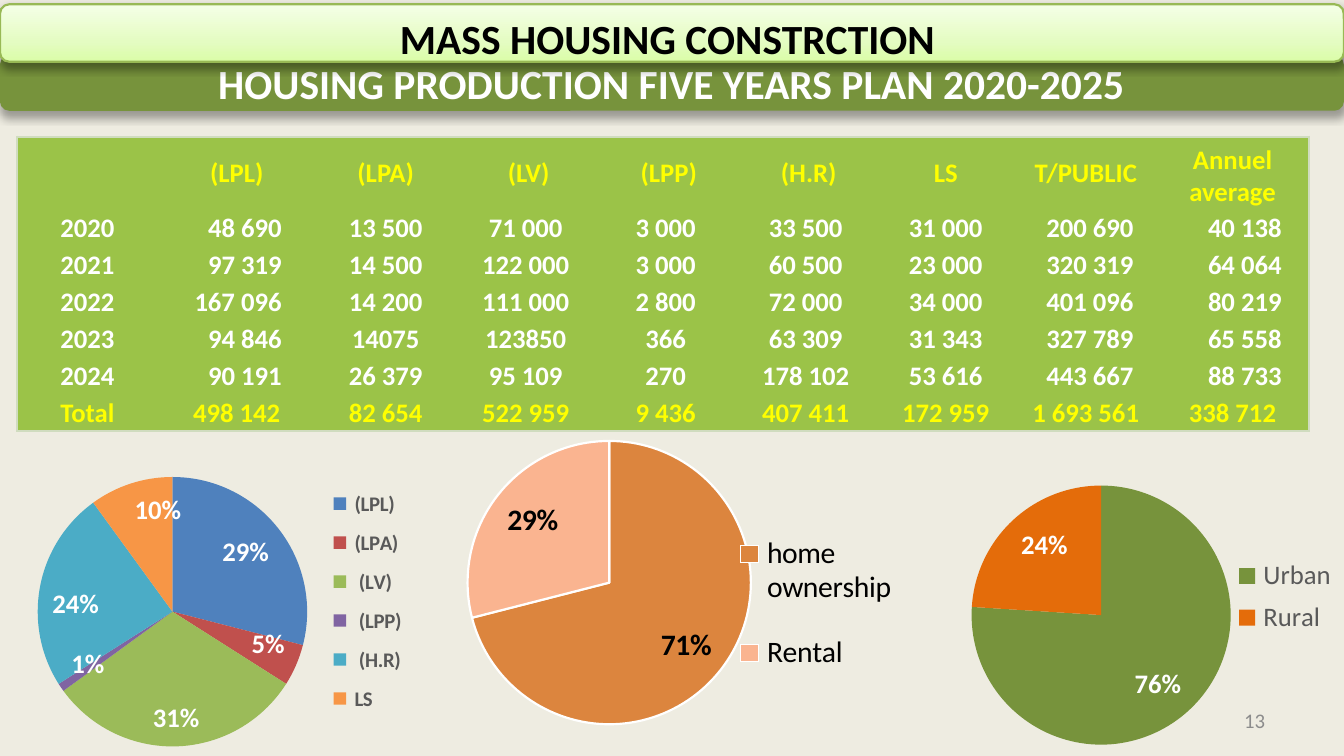
from copy import deepcopy
from lxml import etree
from pptx import Presentation
from pptx.chart.data import CategoryChartData
from pptx.dml.color import RGBColor
from pptx.enum.chart import XL_CHART_TYPE, XL_LABEL_POSITION, XL_LEGEND_POSITION
from pptx.enum.shapes import MSO_SHAPE
from pptx.enum.text import MSO_ANCHOR, PP_ALIGN
from pptx.oxml.ns import qn
from pptx.util import Inches, Pt

PIE = XL_CHART_TYPE.PIE
INSIDE = XL_LABEL_POSITION.INSIDE_END
ON_LEFT, ON_RIGHT = XL_LEGEND_POSITION.LEFT, XL_LEGEND_POSITION.RIGHT
ROUND = MSO_SHAPE.ROUNDED_RECTANGLE
TOP, MIDDLE, BOTTOM = MSO_ANCHOR.TOP, MSO_ANCHOR.MIDDLE, MSO_ANCHOR.BOTTOM
CENTER, RIGHT = PP_ALIGN.CENTER, PP_ALIGN.RIGHT


def rgb(code):
    return RGBColor.from_string(code)


def style(font, size, color, bold=False):
    font.name = "Calibri"
    font.size = Pt(size)
    font.bold = bold
    font.color.rgb = rgb(color)


prs = Presentation()
prs.slide_width, prs.slide_height = Inches(6.3), Inches(6.3 * 9 / 16)
slide = prs.slides.add_slide(prs.slide_layouts[6])
slide.background.fill.solid()
slide.background.fill.fore_color.rgb = rgb("EEECE1")

banners = [
    ("HOUSING PRODUCTION FIVE YEARS PLAN 2020-2025", 0.26, 0.26, MIDDLE, "FFFFFF", 35, 1.8, 0.06),
    ("MASS HOUSING CONSTRCTION", 0.02, 0.27, TOP, "000000", 38, 1.6, 0.1),
]
for text, top, height, anchor, color, alpha, dist, inset in banners:
    bar = slide.shapes.add_shape(ROUND, 0, Inches(top), Inches(6.3), Inches(height))
    bar.shadow.inherit = False
    effects = bar._element.spPr.find(qn("a:effectLst"))
    shade = etree.SubElement(effects, qn("a:outerShdw"), blurRad=str(Pt(3.1)),
                             dist=str(Pt(dist)), dir="5400000", rotWithShape="0")
    black = etree.SubElement(shade, qn("a:srgbClr"), val="000000")
    etree.SubElement(black, qn("a:alpha"), val=str(alpha * 1000))
    if anchor == TOP:
        bar.fill.gradient()
        bar.fill.gradient_angle = 90
        stops = bar._element.spPr.find(".//" + qn("a:gsLst"))
        stops.insert(1, deepcopy(stops[0]))
        tints = [(0, "DAFDA7"), (0.35, "E4FCC2"), (1, "F5FFE7")]
        for stop, (place, tint) in zip(bar.fill.gradient_stops, tints):
            stop.position = place
            stop.color.rgb = rgb(tint)
        bar.line.color.rgb = rgb("98B955")
        bar.line.width = Pt(0.75)
    else:
        bar.fill.solid()
        bar.fill.fore_color.rgb = rgb("77933C")
        bar.line.fill.background()
    frame = bar.text_frame
    frame.text = text
    frame.word_wrap = True
    frame.vertical_anchor = anchor
    frame.margin_left = Inches(0.06)
    frame.margin_right = Inches(inset)
    frame.margin_top = frame.margin_bottom = Inches(0.03)
    frame.paragraphs[0].alignment = CENTER
    style(frame.paragraphs[0].runs[0].font, 14, color, True)

pies = [
    ((-0.7, 2.08, 3.21, 1.42), ["(LPL)", "(LPA)", " (LV)", " (LPP)", " (H.R)", "LS"],
     [29, 5, 31, 1, 24, 10],
     ["4F81BD", "C0504D", "9BBB59", "8064A2", "4BACC6", "F79646"],
     (0.25, 0.11, 0.44, 0.89), (0.69, 0.11, 0.13, 0.82), ON_LEFT,
     (7, "595959", True), (9, "FFFFFF", True), False),
    ((4.09, 1.95, 2.21, 1.57), ["Urban", "Rural"], [76, 24], ["77933C", "E46C0A"],
     (0.21, 0.19, 0.55, 0.81), (0.75, 0.4, 0.25, 0.28), ON_RIGHT,
     (9, "595959", False), (9, "FFFFFF", True), False),
    ((1.51, 1.93, 3.59, 1.62), ["home ownership", "Rental"], [71, 29], ["DC853E", "FAB490"],
     (0.19, 0.08, 0.37, 0.83), (0.53, 0.27, 0.23, 0.57), ON_RIGHT,
     (10, "000000", False), (10, "000000", True), True),
]
for box, cats, vals, fills, plot, key, side, small, label, edged in pies:
    data = CategoryChartData()
    data.categories = cats
    data.add_series("Series 1", vals)
    chart = slide.shapes.add_chart(PIE, *map(Inches, box), data).chart
    chart.has_title = False
    style(chart.font, 10, "000000")
    chart.has_legend = True
    legend = chart.legend
    legend.position = side
    legend.include_in_layout = False
    style(legend.font, *small)
    pie = chart.plots[0]
    pie.vary_by_categories = True
    pie.has_data_labels = True
    labels = pie.data_labels
    labels.show_percentage = True
    labels.show_value = False
    labels.number_format = "0%"
    labels.number_format_is_linked = False
    labels.position = INSIDE
    style(labels.font, *label)
    for i, fill in enumerate(fills):
        wedge = pie.series[0].points[i].format
        wedge.fill.solid()
        wedge.fill.fore_color.rgb = rgb(fill)
        if edged:
            wedge.line.color.rgb = rgb("FFFFFF")
            wedge.line.width = Pt(0.75)
        else:
            wedge.line.fill.background()
    area = chart._chartSpace.chart.plotArea
    for owner, spot, inner in [(area, plot, True), (legend._element, key, False)]:
        for old in owner.findall(qn("c:layout")):
            owner.remove(old)
        layout = etree.Element(qn("c:layout"))
        manual = etree.SubElement(layout, qn("c:manualLayout"))
        if inner:
            etree.SubElement(manual, qn("c:layoutTarget"), val="inner")
        for tag in ("xMode", "yMode"):
            etree.SubElement(manual, qn("c:" + tag), val="edge")
        for tag, size in zip("xywh", spot):
            etree.SubElement(manual, qn("c:" + tag), val=str(size))
        owner.insert(0 if inner else 1, layout)

rows = [
    ["", "(LPL)", "(LPA)", " (LV)", " (LPP)", " (H.R)", "LS", "T/PUBLIC", "Annuel average"],
    ["2020", "48 690", "13 500", "71 000", "3 000", "33 500", "31 000", "200 690", "40 138"],
    ["2021", "97 319", "14 500", "122 000", "3 000", "60 500", "23 000", "320 319", "64 064"],
    ["2022", "167 096", "14 200", "111 000", "2 800", "72 000", "34 000", "401 096", "80 219"],
    ["2023", "94 846", "14075", "123850", "366", "63 309", "31 343", "327 789", "65 558"],
    ["2024", "90 191", "26 379", "95 109", "270", "178 102", "53 616", "443 667", "88 733"],
    ["Total", "498 142", "82 654", "522 959", "9 436", "407 411", "172 959", "1 693 561", "338 712"],
]
last, end = len(rows) - 1, len(rows[0]) - 1
table = slide.shapes.add_table(last + 1, end + 1, Inches(0.08), Inches(0.64),
                               Inches(6.06), Inches(1.38)).table
for c, col in enumerate(table.columns):
    col.width = Inches({0: 0.66, 1: 0.74, end: 0.72}.get(c, 3.94 / 6))
for r, row in enumerate(table.rows):
    row.height = Inches(1.04 / 6 if r else 0.34)
    for c, text in enumerate(rows[r]):
        cell = table.cell(r, c)
        cell.text = text
        cell.margin_left = cell.margin_right = cell.margin_top = Inches(0.01)
        cell.margin_bottom = 0
        cell.vertical_anchor = BOTTOM if (r, c) == (0, end) else MIDDLE
        para = cell.text_frame.paragraphs[0]
        para.alignment = CENTER
        if 0 < r < last and c in (1, end):
            para.alignment = RIGHT
            cell.margin_right = Inches(0.16 if c == 1 else 0.13)
        if 0 < r < last and c == end - 1:
            cell.margin_left = Inches(0.05)
        para.font.size = Pt(9)
        for run in para.runs:
            style(run.font, 9, "FFFF00" if r in (0, last) else "FFFFFF", True)
        props = cell._tc.get_or_add_tcPr()
        sides = {"L": c == 0, "R": c == end, "T": r == 0, "B": r == last}
        for name, outer in sides.items():
            edge = etree.SubElement(props, qn("a:ln" + name), w=str(Pt(0.75)))
            if outer:
                paint = etree.SubElement(edge, qn("a:solidFill"))
                etree.SubElement(paint, qn("a:srgbClr"), val="D0DCBF")
            else:
                etree.SubElement(edge, qn("a:noFill"))
        cell.fill.solid()
        cell.fill.fore_color.rgb = rgb("9BC348")

page = slide.shapes.add_textbox(Inches(4.52), Inches(3.28), Inches(1.47), Inches(0.19))
frame = page.text_frame
frame.text = "13"
frame.word_wrap = True
frame.vertical_anchor = MIDDLE
frame.margin_left = frame.margin_right = Inches(0.06)
frame.margin_top = frame.margin_bottom = Inches(0.03)
frame.paragraphs[0].alignment = RIGHT
style(frame.paragraphs[0].runs[0].font, 7, "8C8C8C")

prs.save("out.pptx")
